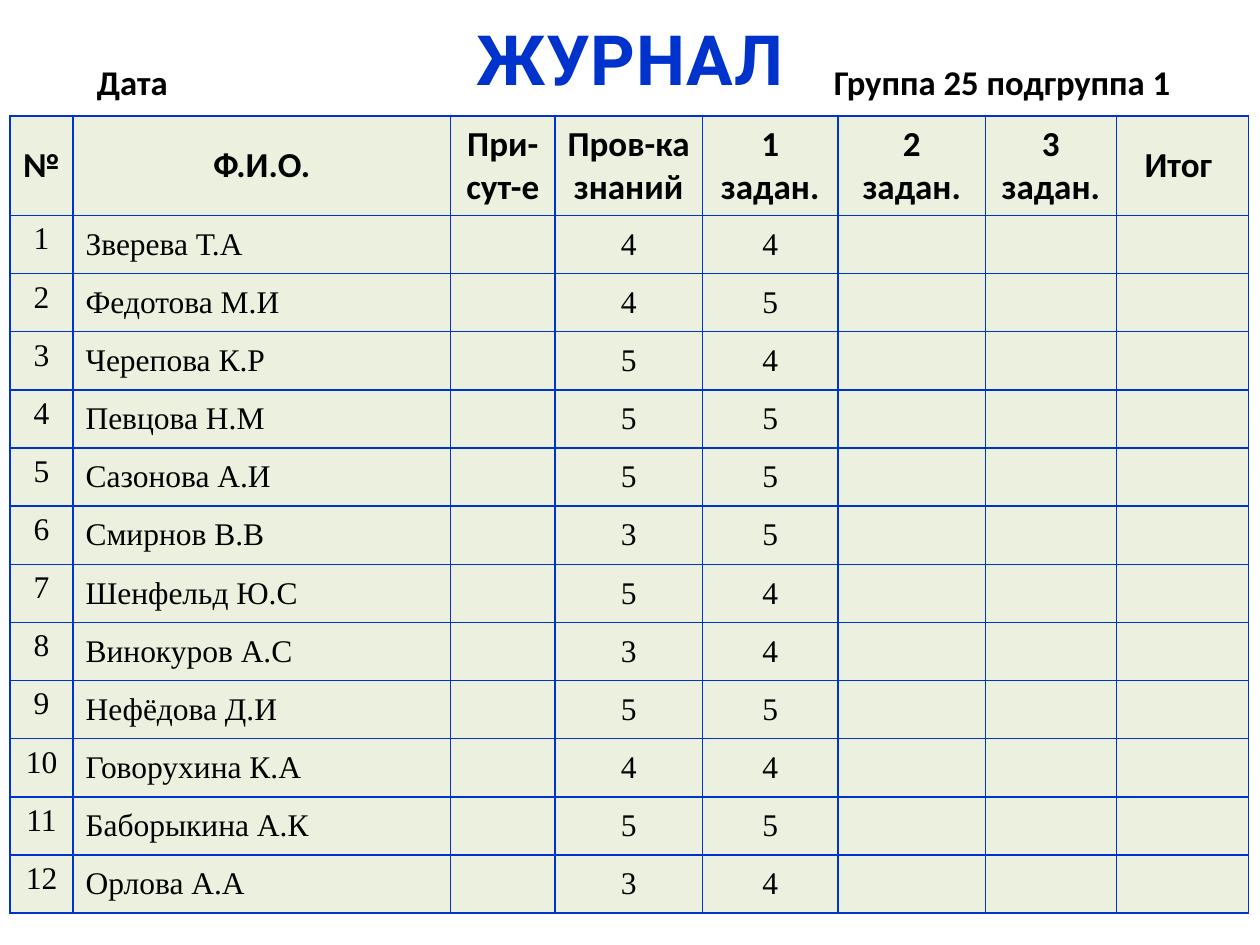
from lxml.etree import SubElement
from pptx import Presentation
from pptx.dml.color import RGBColor
from pptx.enum.text import MSO_ANCHOR, MSO_AUTO_SIZE, PP_ALIGN
from pptx.oxml.ns import qn
from pptx.util import Inches, Pt

COLORS = {"accent": "0033CC", "text": "000000", "cell": "EBF1DE"}
TITLE_FONT = {"name": "Roboto", "size": Pt(39.6), "bold": True}
CAPTION_FONT = {"name": "Calibri", "size": Pt(19.8), "bold": True}
HEADER_FONT = {"name": "Calibri", "size": Pt(20), "bold": True}
BODY_FONT = {"name": "Times New Roman", "size": Pt(18), "bold": False}

COLUMN_WIDTHS = [0.5, 3, 0.83, 1.17, 1.08, 1.17, 1.04, 1.05]
HEADER_HEIGHT = 0.79
HEADERS = ["№", "Ф.И.О.", "При-сут-е", "Пров-ка знаний",
           "1 задан.", "2 задан.", "3 задан.", "Итог "]
NAME_COLUMN = 1
STUDENTS = [  # name, knowledge check, task 1
    ("Зверева Т.А", 4, 4),
    ("Федотова М.И", 4, 5),
    ("Черепова К.Р", 5, 4),
    ("Певцова Н.М", 5, 5),
    ("Сазонова А.И", 5, 5),
    ("Смирнов В.В", 3, 5),
    ("Шенфельд Ю.С", 5, 4),
    ("Винокуров А.С", 3, 4),
    ("Нефёдова Д.И", 5, 5),
    ("Говорухина К.А", 4, 4),
    ("Баборыкина А.К", 5, 5),
    ("Орлова А.А", 3, 4),
]


def style_font(font, values, color):
    for name, value in values.items():
        setattr(font, name, value)
    font.color.rgb = RGBColor.from_string(COLORS[color])


def add_title(page, box):
    title = page.shapes.title
    title.left, title.top, title.width, title.height = map(Inches, box)
    frame = title.text_frame
    frame.auto_size = MSO_AUTO_SIZE.NONE
    frame.vertical_anchor = MSO_ANCHOR.MIDDLE
    para = frame.paragraphs[0]
    para.alignment = PP_ALIGN.CENTER
    span = para.add_run()
    span.text = "ЖУРНАЛ"
    style_font(span.font, TITLE_FONT, "accent")
    span.font._element.set("spc", "50")


def add_caption(page, box):
    """Date on the left and the group at a tab stop, on one line."""
    frame = page.shapes.add_textbox(*map(Inches, box)).text_frame
    frame.word_wrap = True
    frame.vertical_anchor = MSO_ANCHOR.MIDDLE
    para = frame.paragraphs[0]
    tabs = SubElement(para._p.get_or_add_pPr(), qn("a:tabLst"))
    SubElement(tabs, qn("a:tab"), pos=str(Inches(0.65 * box[2])), algn="l")
    para.line_spacing = 0.9
    span = para.add_run()
    span.text = "Дата\tГруппа 25 подгруппа 1"
    style_font(span.font, CAPTION_FONT, "text")


def add_borders(cell):
    properties = cell._tc.get_or_add_tcPr()
    for position, side in enumerate(("a:lnL", "a:lnR", "a:lnT", "a:lnB")):
        line = SubElement(properties, qn(side), w=str(Pt(1)))
        fill = SubElement(line, qn("a:solidFill"))
        SubElement(fill, qn("a:srgbClr"), val=COLORS["accent"])
        properties.insert(position, line)


def fill_cell(cell, text, font, alignment):
    cell.fill.solid()
    cell.fill.fore_color.rgb = RGBColor.from_string(COLORS["cell"])
    add_borders(cell)
    cell.vertical_anchor = MSO_ANCHOR.MIDDLE
    para = cell.text_frame.paragraphs[0]
    para.alignment = alignment
    if text:
        span = para.add_run()
        span.text = text
        style_font(span.font, font, "text")


def hang_number(cell):
    """Top-anchored number with a hanging indent."""
    cell.vertical_anchor = MSO_ANCHOR.TOP
    properties = cell.text_frame.paragraphs[0]._p.get_or_add_pPr()
    properties.set("marL", str(Inches(0.25)))
    properties.set("indent", str(-Inches(0.25)))


def add_journal(page, box):
    rows = [HEADERS]
    for number, (name, check, task) in enumerate(STUDENTS, 1):
        rows.append([str(number), name, "", str(check), str(task), "", "", ""])
    table = page.shapes.add_table(len(rows), len(HEADERS), *map(Inches, box)).table
    table.first_row = table.horz_banding = False

    for column, width in zip(table.columns, COLUMN_WIDTHS):
        column.width = Inches(width * box[2] / sum(COLUMN_WIDTHS))
    student_height = (box[3] - HEADER_HEIGHT) / len(STUDENTS)

    for row, texts in enumerate(rows):
        is_header = row == 0
        table.rows[row].height = Inches(HEADER_HEIGHT if is_header else student_height)
        font = HEADER_FONT if is_header else BODY_FONT
        for column, text in enumerate(texts):
            is_name = column == NAME_COLUMN and not is_header
            alignment = PP_ALIGN.LEFT if is_name else PP_ALIGN.CENTER
            fill_cell(table.cell(row, column), text, font, alignment)
        if not is_header:
            hang_number(table.cell(row, 0))


def main():
    deck = Presentation()
    deck.slide_width, deck.slide_height = Inches(10), Inches(7.5)
    page = deck.slides.add_slide(deck.slide_layouts[5])
    add_title(page, (0.5, 0.25, 9, 0.42))
    add_journal(page, (0.08, 0.92, 9.83, 6.33))
    add_caption(page, (0.67, 0.42, 9, 0.5))
    deck.save("out.pptx")


if __name__ == "__main__":
    main()
